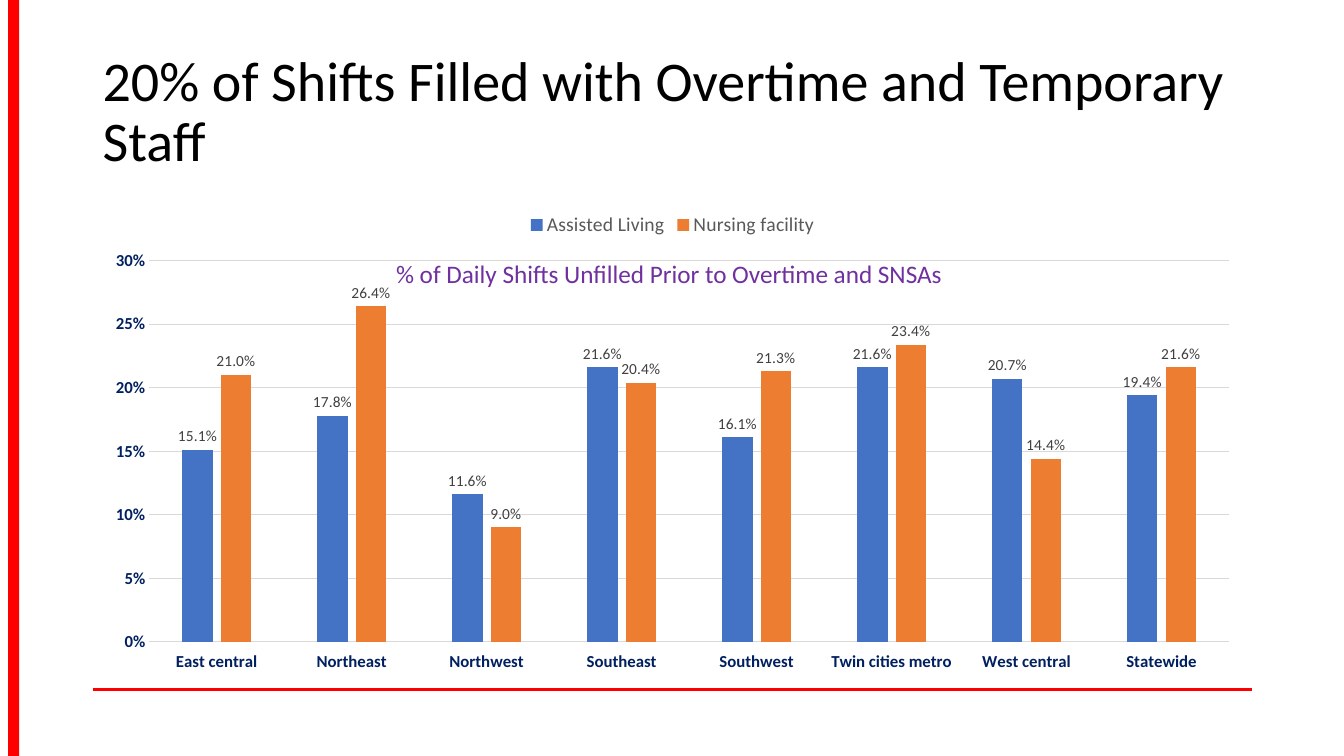
from lxml import etree
from pptx import Presentation
from pptx import util as u
from pptx.chart.data import CategoryChartData
from pptx.dml.color import RGBColor
from pptx.enum import chart as ch, shapes, text
from pptx.oxml.ns import qn

TITLE = "20% of Shifts Filled with Overtime and Temporary Staff"
SUBTITLE = "% of Daily Shifts Unfilled Prior to Overtime and SNSAs"
REGIONS = ["East central", "Northeast", "Northwest", "Southeast",
           "Southwest", "Twin cities metro", "West central", "Statewide"]
SERIES = [
    ("Assisted Living", "4472C4",
     [0.151, 0.178, 0.116, 0.216, 0.161, 0.216, 0.207, 0.194]),
    ("Nursing facility", "ED7D31",
     [0.21, 0.264, 0.09, 0.204, 0.213, 0.234, 0.144, 0.216]),
]
THEME = {
    "font": "Calibri",
    "accent": "FF0000", "title": "000000", "subtitle": "7030A0",
    "axis": "002060", "grid": "D9D9D9", "legend": "595959", "label": "404040",
    "title_pt": 40, "subtitle_pt": 18, "axis_pt": 12,
    "legend_pt": 14, "label_pt": 11, "chart_pt": 10,
}
WIDTH, HEIGHT = 13.33, 7.5
LEFT, CONTENT_W = 0.92, 11.5
RULE_Y = 6.84


def color(name):
    return RGBColor.from_string(THEME[name])


def style(font, role, color_name=None, bold=False):
    font.name = THEME["font"]
    font.size = u.Pt(THEME[role + "_pt"])
    font.color.rgb = color(color_name or role)
    font.bold = bold


def add_text(s, content, box, role, anchor, spacing=None):
    tf = s.shapes.add_textbox(*map(u.Inches, box)).text_frame
    tf.word_wrap = True
    tf.vertical_anchor = anchor
    tf.text = content
    p = tf.paragraphs[0]
    p.line_spacing = spacing
    style(p.runs[0].font, role)


def add_frame(s):
    x, right, y = map(u.Inches, (LEFT, LEFT + CONTENT_W, RULE_Y))
    rule = s.shapes.add_connector(shapes.MSO_CONNECTOR.STRAIGHT, x, y, right, y)
    rule.line.color.rgb = color("accent")
    rule.line.width = u.Pt(2)
    etree.SubElement(rule._element.spPr, qn("a:effectLst"))
    bar = s.shapes.add_shape(shapes.MSO_SHAPE.RECTANGLE,
                             *map(u.Inches, (0.08, 0, 0.11, HEIGHT)))
    bar.shadow.inherit = False
    bar.fill.solid()
    bar.fill.fore_color.rgb = color("accent")
    bar.line.fill.background()


def add_shift_chart(s):
    data = CategoryChartData(number_format="0.0%")
    data.categories = REGIONS
    for name, _, values in SERIES:
        data.add_series(name, values)
    chart = s.shapes.add_chart(
        ch.XL_CHART_TYPE.COLUMN_CLUSTERED,
        *map(u.Inches, (LEFT, 2, CONTENT_W, 4.76)), data).chart
    style(chart.font, "chart", "title")
    chart.has_title = False
    chart.has_legend = True
    chart.legend.position = ch.XL_LEGEND_POSITION.TOP
    chart.legend.include_in_layout = False
    style(chart.legend.font, "legend")

    for axis in (chart.category_axis, chart.value_axis):
        axis.major_tick_mark = axis.minor_tick_mark = ch.XL_TICK_MARK.NONE
        style(axis.tick_labels.font, "axis", bold=True)
    cat, val = chart.category_axis, chart.value_axis
    cat.tick_label_position = ch.XL_TICK_LABEL_POSITION.LOW
    val.minimum_scale, val.maximum_scale, val.major_unit = 0, 0.3, 0.05
    val.tick_labels.number_format = "0%"
    val.tick_labels.number_format_is_linked = False
    val.format.line.fill.background()
    for line in (cat.format.line, val.major_gridlines.format.line):
        line.color.rgb = color("grid")
        line.width = u.Pt(0.75)

    plot = chart.plots[0]
    plot.vary_by_categories = False
    plot.gap_width, plot.overlap = 219, -27
    for series, (_, fill, _) in zip(plot.series, SERIES):
        series.format.fill.solid()
        series.format.fill.fore_color.rgb = RGBColor.from_string(fill)
        series.invert_if_negative = False
        labels = series.data_labels
        labels.show_value = True
        labels.number_format = "0.0%"
        labels.number_format_is_linked = False
        labels.position = ch.XL_LABEL_POSITION.OUTSIDE_END
        style(labels.font, "label")


def main():
    prs = Presentation()
    prs.slide_width, prs.slide_height = u.Inches(WIDTH), u.Inches(HEIGHT)
    s = prs.slides.add_slide(prs.slide_layouts[6])
    add_frame(s)
    add_text(s, TITLE, (LEFT, 0.4, CONTENT_W, 1.45), "title",
             text.MSO_ANCHOR.MIDDLE, 0.9)
    add_shift_chart(s)
    add_text(s, SUBTITLE, (3.83, 2.51, 5.68, 0.4), "subtitle",
             text.MSO_ANCHOR.TOP)
    prs.save("out.pptx")


if __name__ == "__main__":
    main()
